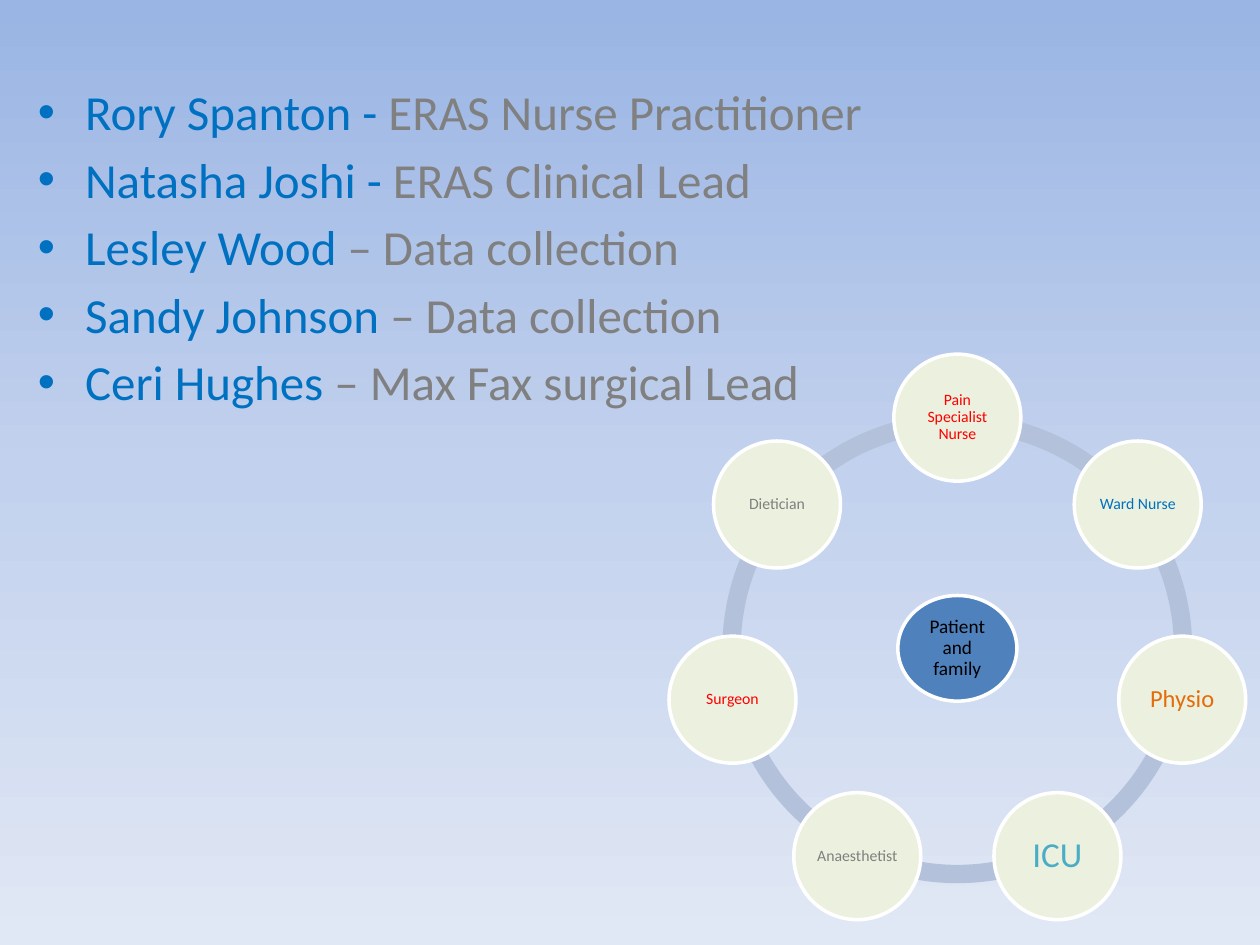
import math
from copy import deepcopy
from dataclasses import dataclass

from pptx import Presentation
from pptx import util as u
from pptx.dml.color import RGBColor
from pptx.enum import shapes, text
from pptx.oxml.ns import qn


@dataclass(frozen=True)
class Theme:
    font: str = "Calibri"
    background: tuple = ((0, "9AB5E4"), (0.5, "C2D1ED"), (1, "E1E8F5"))
    blue: str = "0070C0"
    grey: str = "808080"
    red: str = "FF0000"
    orange: str = "E46C0A"
    teal: str = "4BACC6"
    black: str = "000000"
    white: str = "FFFFFF"
    ring: str = "B3C1DB"
    node: str = "EBF1DE"
    core: str = "4F81BD"
    body_size: int = 28
    core_size: int = 11
    small: int = 9
    medium: int = 14
    large: int = 20


THEME = Theme()

TEAM = [
    ("Rory Spanton - ", "ERAS Nurse Practitioner"),
    ("Natasha Joshi - ", "ERAS Clinical Lead"),
    ("Lesley Wood ", "– Data collection"),
    ("Sandy Johnson ", "– Data collection"),
    ("Ceri Hughes ", "– Max Fax surgical Lead"),
]

ROLES = [
    ("Pain Specialist Nurse", THEME.small, THEME.red),
    ("Ward Nurse", THEME.small, THEME.blue),
    ("Physio", THEME.medium, THEME.orange),
    ("ICU", THEME.large, THEME.teal),
    ("Anaesthetist", THEME.small, THEME.grey),
    ("Surgeon", THEME.small, THEME.red),
    ("Dietician", THEME.small, THEME.grey),
]

CENTRE_X, CENTRE_Y = 19.3, 13.07
RING_SIZE, ORBIT, NODE_SIZE = 9.47, 4.65, 2.56


class SlideBuilder:
    def __init__(self, slide, theme):
        self.slide = slide
        self.theme = theme

    def background(self):
        fill = self.slide.background.fill
        fill.gradient()
        fill.gradient_angle = 270
        stop_list = self.slide.element.find(".//" + qn("a:gsLst"))
        stop_list.insert(1, deepcopy(stop_list[0]))
        for stop, (position, color) in zip(fill.gradient_stops, self.theme.background):
            stop.position = position
            stop.color.rgb = RGBColor.from_string(color)

    def style(self, font, size, color):
        font.name = self.theme.font
        font.size = u.Pt(size)
        font.color.rgb = RGBColor.from_string(color)

    def team_list(self, placeholder, members):
        placeholder.left, placeholder.top = u.Cm(0.51), u.Cm(1.52)
        placeholder.width, placeholder.height = u.Cm(18.59), u.Cm(11.2)
        frame = placeholder.text_frame
        frame.auto_size = text.MSO_AUTO_SIZE.NONE
        for index, parts in enumerate(members):
            paragraph = frame.add_paragraph() if index else frame.paragraphs[0]
            paragraph.space_before = u.Pt(5 if index else 0)
            for part, color in zip(parts, (self.theme.blue, self.theme.grey)):
                run = paragraph.add_run()
                run.text = part
                self.style(run.font, self.theme.body_size, color)

    def centred_shape(self, kind, x, y, width, height, fill):
        shape = self.slide.shapes.add_shape(
            kind, u.Cm(x - width / 2), u.Cm(y - height / 2), u.Cm(width), u.Cm(height)
        )
        shape.shadow.inherit = False
        shape.fill.solid()
        shape.fill.fore_color.rgb = RGBColor.from_string(fill)
        return shape

    def arc(self, x, y, size, start, end):
        shape = self.centred_shape(
            shapes.MSO_SHAPE.BLOCK_ARC, x, y, size, size, self.theme.ring
        )
        shape.line.fill.background()
        for index, value in enumerate((start * 0.6, end * 0.6, 0.039)):
            shape.adjustments[index] = value

    def circle(self, x, y, width, height, fill, label, size, color):
        shape = self.centred_shape(shapes.MSO_SHAPE.OVAL, x, y, width, height, fill)
        shape.line.color.rgb = RGBColor.from_string(self.theme.white)
        shape.line.width = u.Pt(2)
        frame = shape.text_frame
        frame.word_wrap = True
        frame.vertical_anchor = text.MSO_ANCHOR.MIDDLE
        frame.margin_left = frame.margin_right = u.Cm(0.03)
        frame.margin_top = frame.margin_bottom = u.Cm(0.03)
        frame.text = label
        paragraph = frame.paragraphs[0]
        paragraph.alignment = text.PP_ALIGN.CENTER
        paragraph.line_spacing = 0.9
        self.style(paragraph.runs[0].font, size, color)


def main():
    presentation = Presentation()
    presentation.slide_width, presentation.slide_height = u.Cm(25.4), u.Cm(19.05)
    slide = presentation.slides.add_slide(presentation.slide_layouts[1])
    title = slide.shapes.title.element
    title.getparent().remove(title)

    builder = SlideBuilder(slide, THEME)
    builder.background()
    builder.team_list(slide.placeholders[1], TEAM)

    step = 360 / len(ROLES)
    angles = [270 + index * step for index in range(len(ROLES))]
    for angle in angles:
        builder.arc(CENTRE_X, CENTRE_Y, RING_SIZE, angle % 360, (angle + step) % 360)

    builder.circle(
        CENTRE_X, CENTRE_Y, 2.4, 2.13, THEME.core,
        "Patient and family", THEME.core_size, THEME.black,
    )
    for angle, (label, size, color) in zip(angles, ROLES):
        x = CENTRE_X + ORBIT * math.cos(math.radians(angle))
        y = CENTRE_Y + ORBIT * math.sin(math.radians(angle))
        builder.circle(x, y, NODE_SIZE, NODE_SIZE, THEME.node, label, size, color)

    presentation.save("out.pptx")


if __name__ == "__main__":
    main()
